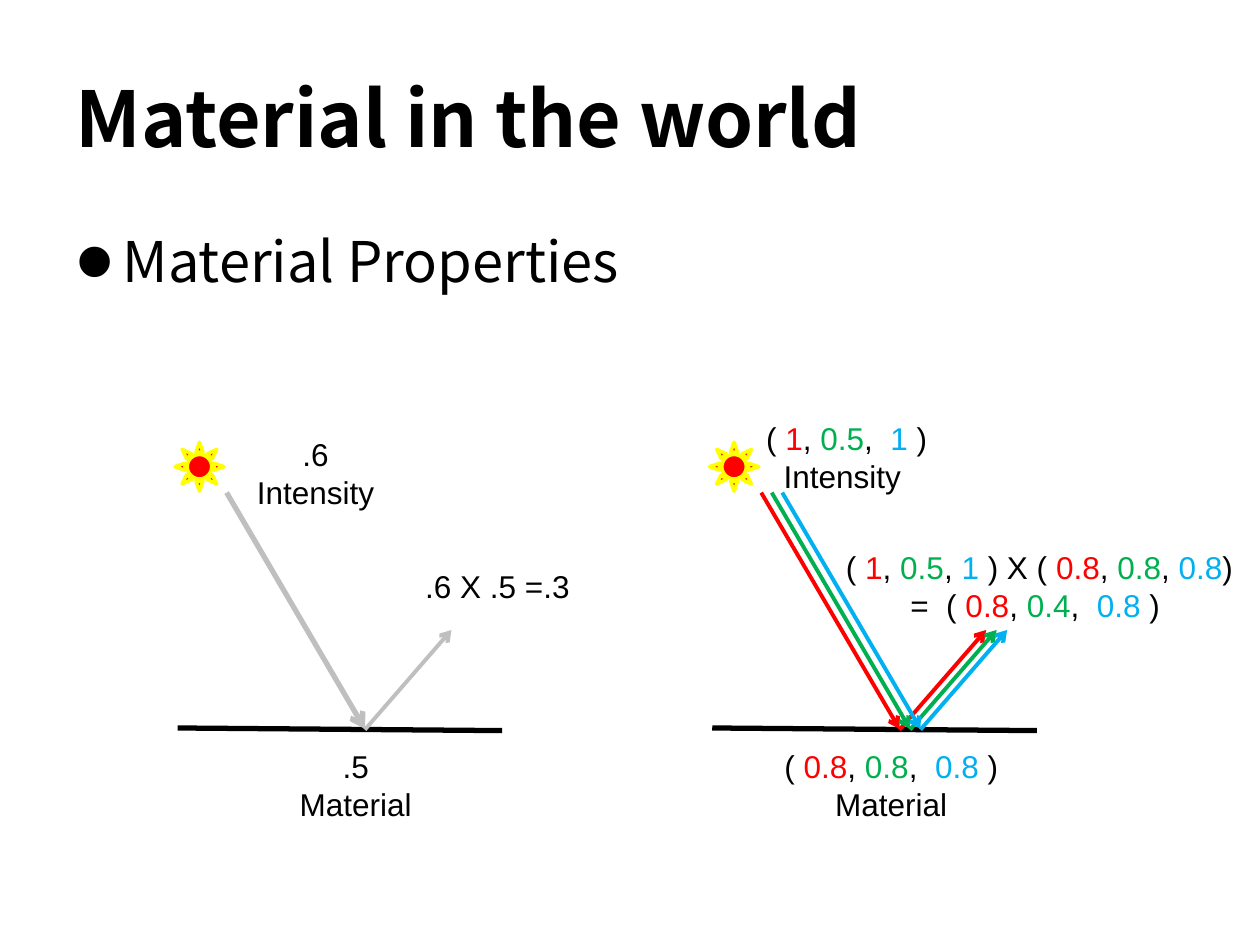
from lxml import etree
from pptx import Presentation
from pptx.dml.color import RGBColor
from pptx.enum.shapes import MSO_CONNECTOR, MSO_SHAPE
from pptx.enum.text import MSO_ANCHOR, PP_ALIGN
from pptx.oxml import parse_xml
from pptx.oxml.ns import nsdecls, qn
from pptx.util import Pt

COLORS = {"k": "000000", "r": "FF0000", "g": "00B050", "b": "00B0F0",
          "gray": "BFBFBF", "yellow": "FFFF00"}
HEAD_FONT = "Noto Sans CJK SC"

prs = Presentation()
prs.slide_width, prs.slide_height = Pt(720), Pt(540)
s = prs.slides.add_slide(prs.slide_layouts[6])


def add_text(x, y, w, h, lines, size=18, font="Arial", align=PP_ALIGN.CENTER):
    """Add a text box; each |part| between bars starts with its colour key."""
    tf = s.shapes.add_textbox(Pt(x), Pt(y), Pt(w), Pt(h)).text_frame
    tf.word_wrap = True
    for i, line in enumerate(lines):
        p = tf.paragraphs[0] if i == 0 else tf.add_paragraph()
        p.alignment = align
        p.font.size, p.font.name = Pt(size), font
        for j, part in enumerate(line.split("|")):
            key, text = (part[0], part[1:]) if j % 2 else ("k", part)
            r = p.add_run()
            r.text = text
            r.font.color.rgb = RGBColor.from_string(COLORS[key])
    return tf


def add_line(x1, y1, x2, y2, color, width, arrow=True):
    c = s.shapes.add_connector(MSO_CONNECTOR.STRAIGHT, Pt(x1), Pt(y1), Pt(x2), Pt(y2))
    c.line.color.rgb = RGBColor.from_string(COLORS[color])
    c.line.width = Pt(width)
    if arrow:
        etree.SubElement(c.line._get_or_add_ln(), qn("a:tailEnd"), type="arrow")
    etree.SubElement(c._element.spPr, qn("a:effectLst"))


# Title
tf = add_text(36, 21.6, 517, 90, ["Material in the world"], 44, HEAD_FONT, PP_ALIGN.LEFT)
tf.vertical_anchor = MSO_ANCHOR.MIDDLE
r = tf.paragraphs[0].runs[0]
r.font.bold = True
r.font.fill._xPr.find(qn("a:solidFill")).addnext(parse_xml(
    f'<a:effectLst {nsdecls("a")}><a:outerShdw blurRad="38100" dist="38100" dir="2700000">'
    '<a:srgbClr val="000000"><a:alpha val="43000"/></a:srgbClr></a:outerShdw></a:effectLst>'))

# Bullet
tf = add_text(36, 126, 648, 356, ["Material Properties"], 32, HEAD_FONT, PP_ALIGN.LEFT)
pPr = tf.paragraphs[0]._p.get_or_add_pPr()
pPr.set("marL", str(Pt(27)))
pPr.set("indent", str(-Pt(27)))
pPr.insert(0, parse_xml(f'<a:buSzPct {nsdecls("a")} val="200000"/>'))
pPr.insert(1, parse_xml(f'<a:buFont {nsdecls("a")} typeface="Arial"/>'))
pPr.insert(2, parse_xml(f'<a:buChar {nsdecls("a")} char="•"/>'))

# Two scenes: one gray ray, then one ray per colour channel
RAY_GAP = 6
for x, rays, in_width in [(100, ["gray"], 3), (405.5, ["r", "g", "b"], 2.25)]:
    add_line(x + 1.5, 416, x + 187, 417.5, "k", 3, arrow=False)
    for i, color in enumerate(rays):
        left = x + i * RAY_GAP
        add_line(left + 29.5, 281.5, left + 108.5, 416.5, color, in_width)
        add_line(left + 108.5, 417, left + 158, 360, color, 2.25)
    sun = s.shapes.add_shape(MSO_SHAPE.SUN, Pt(x), Pt(252.7), Pt(28), Pt(28))
    sun.shadow.inherit = False
    sun.fill.solid()
    sun.fill.fore_color.rgb = RGBColor.from_string(COLORS["r"])
    sun.line.color.rgb = RGBColor.from_string(COLORS["yellow"])
    sun.line.width = Pt(2)

# Labels
for x, y, w, h, lines in [
    (110, 245, 140.5, 51, [".6", "Intensity"]),
    (214, 320.5, 140.5, 29, [".6 X .5 =.3"]),
    (133, 423.5, 140.5, 51, [".5", "Material"]),
    (411, 236, 140.5, 51, [" ( |r1|, |g0.5|,  |b1| )", "Intensity"]),
    (468, 309.5, 252, 51, [" ( |r1|, |g0.5|, |b1| ) X ( |r0.8|, |g0.8|, |b0.8|) ",
                           "=  ( |r0.8|, |g0.4|,  |b0.8| ) "]),
    (439, 423.5, 140.5, 51, ["( |r0.8|, |g0.8|,  |b0.8| ) Material"]),
]:
    add_text(x, y, w, h, lines)

prs.save("out.pptx")
